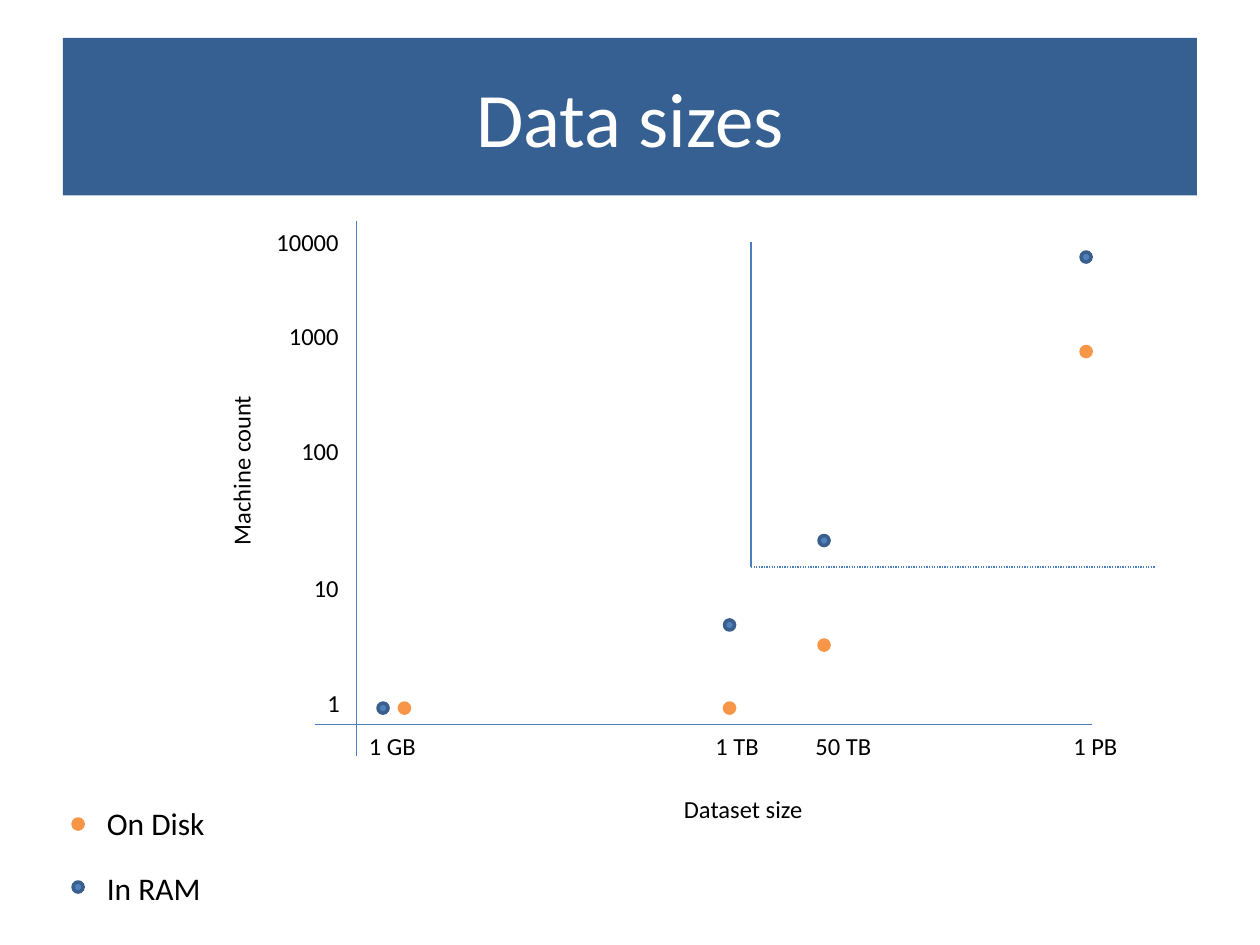
from pptx import Presentation
from pptx.dml.color import RGBColor
from pptx.enum.dml import MSO_LINE
from pptx.enum.shapes import MSO_CONNECTOR, MSO_SHAPE
from pptx.enum.text import MSO_ANCHOR, PP_ALIGN
from pptx.oxml.ns import qn
from pptx.util import Inches, Pt
from lxml.etree import SubElement


def color(hex_value):
    return RGBColor.from_string(hex_value)


def write(shape, text, size, hex_value, align):
    frame = shape.text_frame
    frame.word_wrap = True
    paragraph = frame.paragraphs[0]
    paragraph.alignment = align
    run = paragraph.add_run()
    run.text = text
    run.font.name = "Calibri"
    run.font.size = Pt(size)
    run.font.color.rgb = color(hex_value)


prs = Presentation()
prs.slide_width = Inches(10)
prs.slide_height = Inches(7.5)
slide = prs.slides.add_slide(prs.slide_layouts[6])
shapes = slide.shapes

title = shapes.add_shape(MSO_SHAPE.RECTANGLE, Inches(0.5), Inches(0.3), Inches(9), Inches(1.25))
title.shadow.inherit = False
title.fill.solid()
title.fill.fore_color.rgb = color("376092")
title.line.fill.background()
title.text_frame.vertical_anchor = MSO_ANCHOR.MIDDLE
write(title, "Data sizes", 44, "FFFFFF", PP_ALIGN.CENTER)

axes_and_limits = [
    (2.83, 1.75, 2.83, 6, None),
    (2.5, 5.75, 8.67, 5.75, None),
    (5.96, 4.5, 9.17, 4.5, MSO_LINE.ROUND_DOT),
    (5.96, 1.92, 5.96, 4.5, None),
]
for x1, y1, x2, y2, dash in axes_and_limits:
    rule = shapes.add_connector(MSO_CONNECTOR.STRAIGHT, Inches(x1), Inches(y1), Inches(x2), Inches(y2))
    rule.line.color.rgb = color("4B7EBC")
    rule.line.width = Pt(0.75)
    if dash:
        rule.line.dash_style = dash
    SubElement(rule._element.spPr, qn("a:effectLst"))

size_ticks = [("1 GB", 2.83, 0.58), ("1 TB", 5.58, 0.58), (" 50 TB", 6.33, 1), ("1 PB", 8.42, 0.58)]
count_ticks = [("10 ", 4.5), ("100 ", 3.41), ("1000 ", 2.5), ("10000 ", 1.75)]
legend = [("On Disk", 6.33), ("In RAM", 6.85)]

labels = [(text, left, 5.75, width, 0.34, 14, PP_ALIGN.LEFT, 0) for text, left, width in size_ticks]
labels += [(text, 2.08, top, 0.75, 0.34, 14, PP_ALIGN.RIGHT, 0) for text, top in count_ticks]
labels += [(text, 0.75, top, 1.5, 0.4, 18, PP_ALIGN.LEFT, 0) for text, top in legend]
labels += [
    ("1", 2.5, 5.41, 0.33, 0.34, 14, PP_ALIGN.LEFT, 0),
    ("Machine count", 1.08, 3.42, 1.67, 0.34, 14, PP_ALIGN.LEFT, 270),
    ("Dataset size", 5.33, 6.25, 1.67, 0.34, 14, PP_ALIGN.LEFT, 0),
]
for text, left, top, width, height, size, align, rotation in labels:
    label = shapes.add_textbox(Inches(left), Inches(top), Inches(width), Inches(height))
    label.rotation = rotation
    write(label, text, size, "000000", align)

in_ram = [(3, 5.58), (5.75, 4.92), (6.5, 4.25), (8.58, 2), (0.58, 7)]
on_disk = [(3.17, 5.58), (5.75, 5.58), (6.5, 5.08), (8.58, 2.75), (0.58, 6.5)]
for points, fill, outline in [(in_ram, "4F81BD", "3A5F8C"), (on_disk, "F79646", "F79646")]:
    for left, top in points:
        dot = shapes.add_shape(MSO_SHAPE.OVAL, Inches(left), Inches(top), Inches(0.08), Inches(0.08))
        dot.shadow.inherit = False
        dot.fill.solid()
        dot.fill.fore_color.rgb = color(fill)
        dot.line.color.rgb = color(outline)
        dot.line.width = Pt(2)

prs.save("out.pptx")
